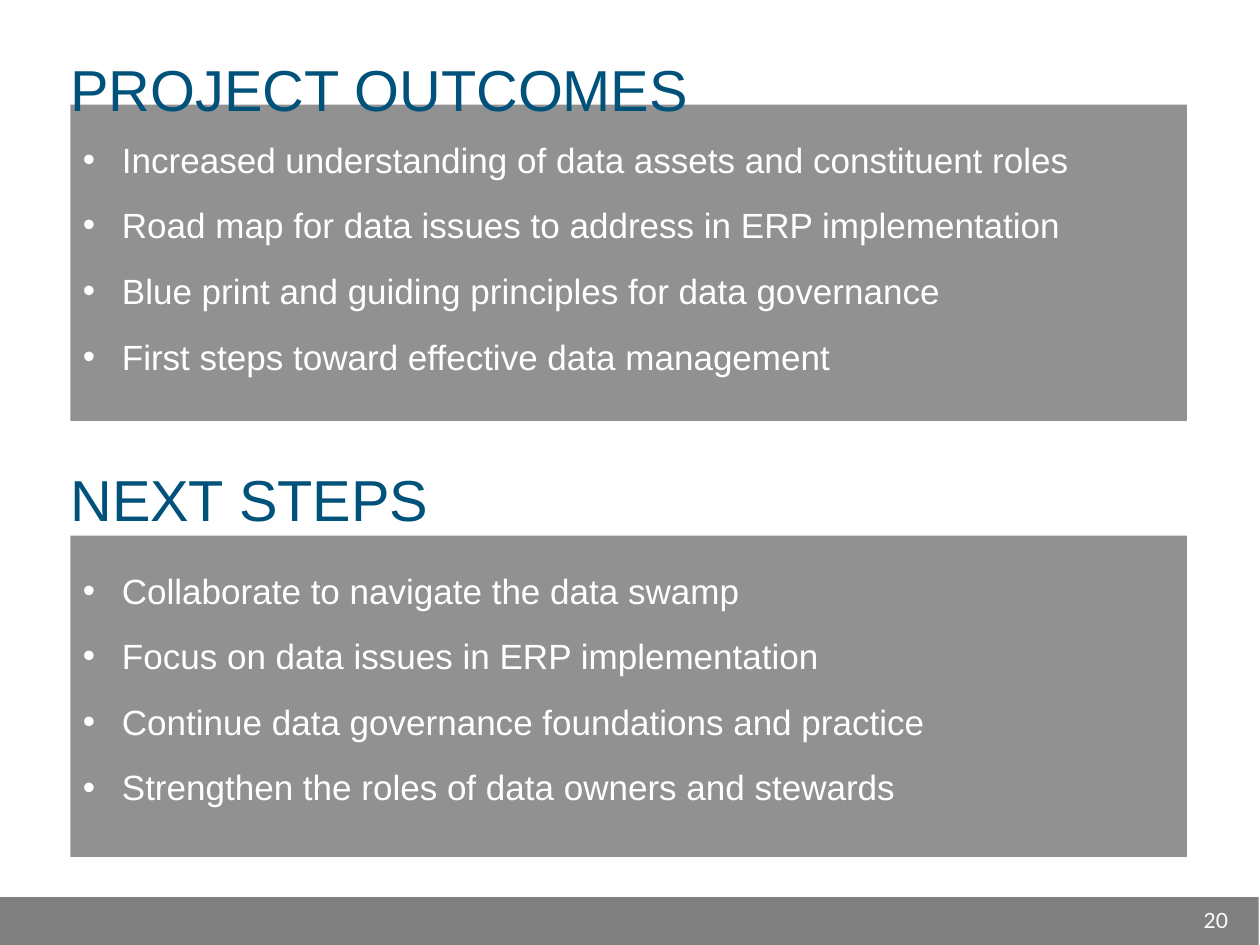
from dataclasses import dataclass

from lxml import etree
from pptx import Presentation
from pptx.dml.color import RGBColor
from pptx.enum.shapes import MSO_SHAPE
from pptx.enum.text import MSO_ANCHOR, PP_ALIGN
from pptx.oxml.ns import qn
from pptx.util import Inches, Pt

RECTANGLE = MSO_SHAPE.RECTANGLE
TOP, MIDDLE = MSO_ANCHOR.TOP, MSO_ANCHOR.MIDDLE
LEFT, CENTER = PP_ALIGN.LEFT, PP_ALIGN.CENTER


@dataclass(frozen=True)
class Theme:
    heading: RGBColor = RGBColor(0x00, 0x52, 0x7B)
    panel: RGBColor = RGBColor(0x92, 0x91, 0x92)
    footer: RGBColor = RGBColor(0x80, 0x80, 0x80)
    light: RGBColor = RGBColor(0xFF, 0xFF, 0xFF)
    font: str = "Arial"
    number_font: str = "Lato"
    heading_size: int = 33
    bullet_size: int = 20
    number_size: int = 12


THEME = Theme()

OUTCOMES = [
    "Increased understanding of data assets and constituent roles",
    "Road map for data issues to address in ERP implementation",
    "Blue print and guiding principles for data governance",
    "First steps toward effective data management",
]
NEXT_STEPS = [
    "Collaborate to navigate the data swamp",
    "Focus on data issues in ERP implementation",
    "Continue data governance foundations and practice",
    "Strengthen the roles of data owners and stewards",
]


def add_run(paragraph, text, size, color, font=THEME.font):
    run = paragraph.add_run()
    run.text = text
    run.font.name = font
    run.font.size = Pt(size)
    run.font.color.rgb = color


def add_rectangle(slide, left, top, width, height, fill):
    shape = slide.shapes.add_shape(
        RECTANGLE, Inches(left), Inches(top), Inches(width), Inches(height))
    shape.shadow.inherit = False
    shape.fill.solid()
    shape.fill.fore_color.rgb = fill
    shape.line.fill.background()
    return shape


def add_heading(slide, text, top, width, height):
    box = slide.shapes.add_textbox(
        Inches(0.46), Inches(top), Inches(width), Inches(height))
    frame = box.text_frame
    frame.word_wrap = True
    frame.margin_top = Inches(0.1)
    add_run(frame.paragraphs[0], text, THEME.heading_size, THEME.heading)


def set_bullet(paragraph, indent):
    properties = paragraph._p.get_or_add_pPr()
    properties.set("marL", str(Inches(indent)))
    properties.set("indent", str(-Inches(indent)))
    etree.SubElement(properties, qn("a:buFont"), typeface=THEME.font)
    etree.SubElement(properties, qn("a:buChar"), char="•")


def add_bullet_panel(slide, top, height, items):
    panel = add_rectangle(slide, 0.56, top, 8.86, height, THEME.panel)
    frame = panel.text_frame
    frame.word_wrap = True
    frame.vertical_anchor = TOP
    frame.margin_left = frame.margin_top = frame.margin_right = Inches(0.1)
    frame.margin_bottom = Inches(0.05)
    for index, item in enumerate(items):
        paragraph = frame.add_paragraph() if index else frame.paragraphs[0]
        paragraph.alignment = LEFT
        paragraph.line_spacing = 1.5
        paragraph.space_before = Pt(1.5)
        set_bullet(paragraph, 0.31)
        add_run(paragraph, item, THEME.bullet_size, THEME.light)


def add_footer(slide, number):
    add_rectangle(slide, -0.01, 7.12, 10, 0.39, THEME.footer)
    box = slide.shapes.add_textbox(
        Inches(9.3), Inches(7.1), Inches(0.7), Inches(0.4))
    frame = box.text_frame
    frame.word_wrap = True
    frame.vertical_anchor = MIDDLE
    paragraph = frame.paragraphs[0]
    paragraph.alignment = CENTER
    add_run(paragraph, number, THEME.number_size, THEME.light, THEME.number_font)


def main():
    presentation = Presentation()
    presentation.slide_width = Inches(10)
    presentation.slide_height = Inches(7.5)
    slide = presentation.slides.add_slide(presentation.slide_layouts[6])

    add_heading(slide, "NEXT STEPS", 3.58, 9.11, 0.83)
    add_footer(slide, "20")
    add_bullet_panel(slide, 0.83, 2.51, OUTCOMES)
    add_bullet_panel(slide, 4.25, 2.55, NEXT_STEPS)
    add_heading(slide, "PROJECT OUTCOMES", 0.33, 8.04, 0.58)

    presentation.save("out.pptx")


if __name__ == "__main__":
    main()
